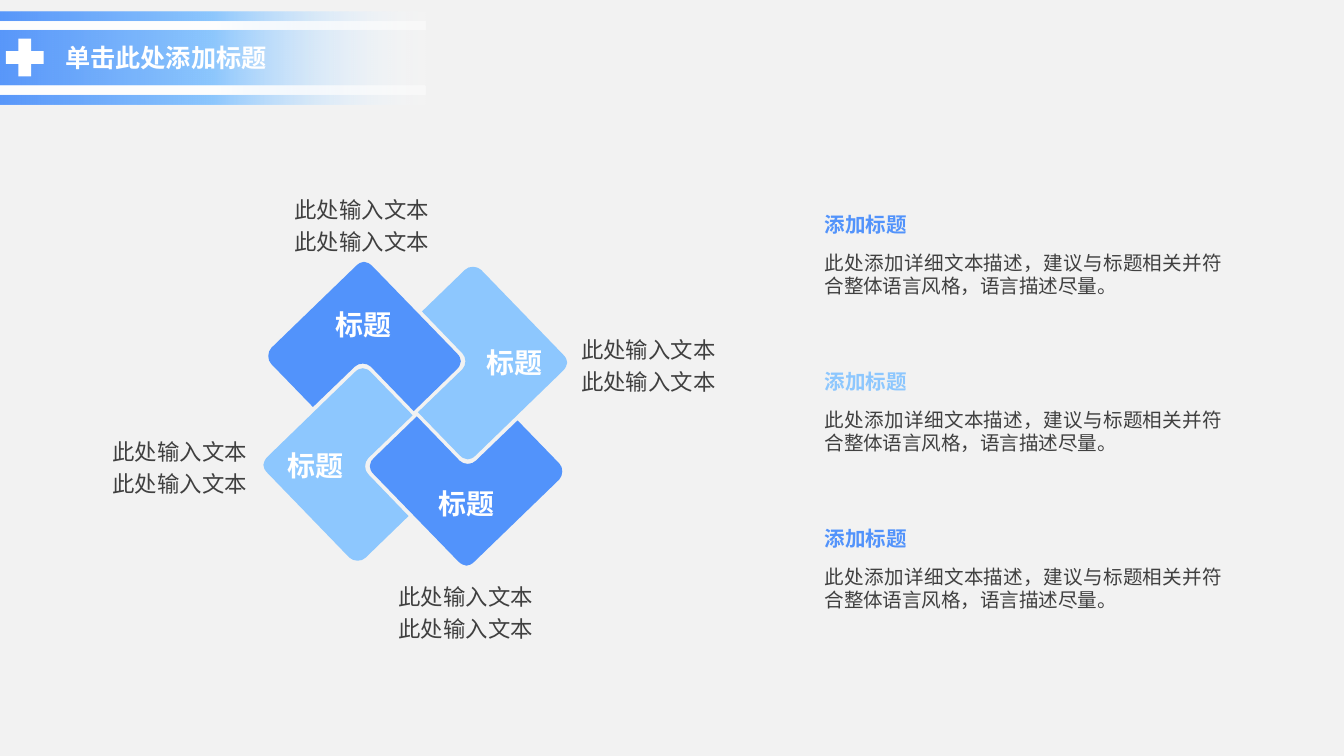
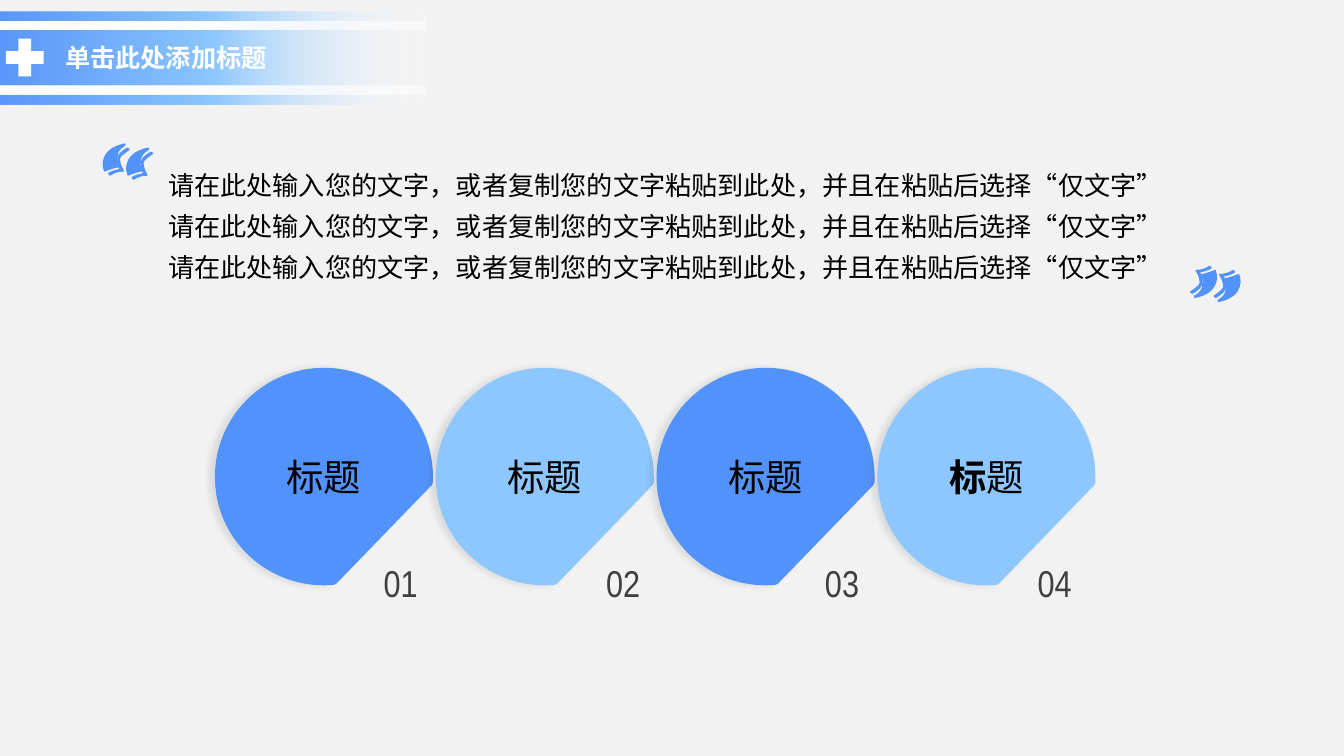
from lxml.etree import SubElement
from pptx import Presentation
from pptx.dml.color import RGBColor
from pptx.enum.shapes import MSO_SHAPE as SHAPE
from pptx.enum.text import MSO_ANCHOR as ANCHOR, MSO_AUTO_SIZE as AUTO, PP_ALIGN as ALIGN
from pptx.oxml.ns import qn
from pptx.util import Pt

FONT, NUMBER_FONT = "Noto Sans CJK SC", "Arial Narrow"
BLUE, SKY, WHITE = "5293FB", "8DC7FE", "FFFFFF"
GREY, BLACK, PAPER = "404040", "000000", "F2F2F2"
INSETS = (7.2, 3.6, 7.2, 3.6)

PETAL = [
    (-28.1, -24.4), (-25.9, -23.7, -24.5, -23.7, -23.8, -22.3),
    (-1.4, 0.8), (-25.2, 23.8), (-27.4, 26, -27.4, 30.3, -25.2, 32.4),
    (-3.6, 54.8), (-26.6, 77.1), (-28.8, 79.4, -33.1, 79.2, -35.3, 77.1),
    (-79.2, 31.7), (-80.6, 30.3, -81.4, 28.8, -81.4, 27.4),
    (-81.2, 26, -80.6, 24.5, -79.2, 23.1),
    (-32.4, -22.3), (-31, -23.7, -29.5, -24.4, -28.1, -24.4),
]
DISC = [
    (56.2, 0), (87.1, 0, 112.3, 25.2, 112.3, 56.2), (112.3, 59),
    (61.2, 111.8), (59.8, 111.9, 57.6, 112, 56.2, 112),
    (25.2, 112, 0, 87.1, 0, 56.2), (0, 25.2, 25.2, 0, 56.2, 0),
]
CRESCENT = [
    (13, 2.2), (13.7, 2.9), (10.8, 5, 8.6, 6.5, 8.6, 7.9),
    (8.6, 10.1, 9.4, 12.2, 10.8, 14.4), (7.9, 14.4, 5.8, 15.1, 3.6, 16.6),
    (2.9, 15.8), (5, 14.4, 6.5, 14.4, 8.6, 13.7), (9.4, 13.7),
    (7.9, 11.5, 7.2, 10.1, 7.9, 7.9), (7.9, 5.8, 9.4, 4.3, 13, 2.2),
]
DROP = [
    (11.5, 0), (11.5, 0.7), (8.6, 2.2, 7.2, 4.3, 7.2, 7.2),
    (6.5, 9.4, 7.2, 10.8, 7.9, 12.2), (7.2, 12.2),
    (4.3, 13, 2.2, 13.7, 0.7, 14.4), (0, 13, 0, 11.5, 0, 10.1),
    (0.7, 4.3, 5, 1.4, 11.5, 0),
]


def rgb(value):
    return RGBColor.from_string(value)


def box(x, y, w, h):
    return Pt(x), Pt(y), Pt(w), Pt(h)


def transform(outline, move):
    moved = []
    for seg in outline:
        points = [move(x, y) for x, y in zip(seg[::2], seg[1::2])]
        moved.append(tuple(v for point in points for v in point))
    return moved


def paint(sp, color, line=0):
    sp.shadow.inherit = False
    sp.fill.solid()
    sp.fill.fore_color.rgb = rgb(color)
    if line:
        sp.line.color.rgb = rgb(color)
        sp.line.width = Pt(line)
    else:
        sp.line.fill.background()


def bend(sp, contours):
    steps = iter(list(sp._element.iter(qn("a:lnTo"))))
    for outline in contours:
        for seg in outline[1:]:
            step = next(steps)
            if len(seg) == 6:
                step.tag = qn("a:cubicBezTo")
                for _ in range(2):
                    control = next(steps)
                    step.append(control[0])
                    control.getparent().remove(control)


def add_outline(shapes, x, y, contours, color, line=0):
    builder = None
    for outline in contours:
        flat = [v for seg in outline for v in seg]
        points = [(Pt(x + px), Pt(y + py)) for px, py in zip(flat[::2], flat[1::2])]
        if builder is None:
            builder = shapes.build_freeform(*points[0], scale=1.0)
        else:
            builder.move_to(*points[0])
        builder.add_line_segments(points[1:], close=True)
    sp = builder.convert_to_shape()
    curves = [seg for outline in contours for seg in outline if len(seg) == 6]
    if curves:
        replace_steps(sp, contours)
    paint(sp, color, line)
    return sp


def replace_steps(sp, contours):
    steps = iter(list(sp._element.iter(qn("a:lnTo"))))
    for outline in contours:
        for seg in outline[1:]:
            group = [next(steps) for _ in range(len(seg) // 2)]
            if len(group) == 1:
                continue
            parent = group[0].getparent()
            curve = SubElement(parent, qn("a:cubicBezTo"))
            group[0].addprevious(curve)
            for step in group:
                curve.append(step[0])
                parent.remove(step)


def style(r, size, color, bold=False, font=FONT):
    f = r.font
    f.size, f.bold, f.name = Pt(size), bold, font
    f.color.rgb = rgb(color)
    SubElement(r._r.get_or_add_rPr(), qn("a:ea")).set("typeface", font)


def write(sp, lines, size, color, bold=False, font=FONT, align=ALIGN.LEFT,
          anchor=ANCHOR.TOP, spacing=1.0, insets=INSETS, grow=False):
    tf = sp.text_frame
    tf.word_wrap = True
    tf.auto_size = AUTO.SHAPE_TO_FIT_TEXT if grow else AUTO.NONE
    tf.vertical_anchor = anchor
    tf.margin_left, tf.margin_top, tf.margin_right, tf.margin_bottom = map(Pt, insets)
    tf.text = "\n".join(lines)
    for p in tf.paragraphs:
        p.alignment, p.line_spacing, p.space_before = align, spacing, Pt(0)
        for r in p.runs:
            style(r, size, color, bold, font)


def add_text(shapes, x, y, w, h, lines, size, color, **options):
    write(shapes.add_textbox(*box(x, y, w, h)), lines, size, color, **options)


def place(placeholder, x, y, w, h):
    placeholder.left, placeholder.top, placeholder.width, placeholder.height = box(x, y, w, h)


def add_band(slide, x, y, w, h, stops):
    sp = slide.shapes.add_shape(SHAPE.RECTANGLE, *box(x, y, w, h))
    sp.shadow.inherit = False
    sp.line.fill.background()
    sp.fill.gradient()
    sp.fill.gradient_angle = 0
    gs_list = sp._element.spPr.find(qn("a:gradFill")).find(qn("a:gsLst"))
    for gs in list(gs_list):
        gs_list.remove(gs)
    for pos, color, alpha in stops:
        gs = SubElement(gs_list, qn("a:gs"), pos=str(pos * 1000))
        clr = SubElement(gs, qn("a:srgbClr"), val=color)
        SubElement(clr, qn("a:alpha"), val=str(alpha * 1000))


def add_header(slide, title, x=0, y=6.3, w=228.2, h=49.7):
    add_band(slide, x, y, w, h, [(0, BLUE, 95), (50, SKY, 100), (100, WHITE, 8)])
    for dy in (5.2, 39.8):
        add_band(slide, x, y + dy, w, 4.5, [(0, WHITE, 100), (50, WHITE, 100), (100, WHITE, 50)])
    plus = slide.shapes.add_shape(SHAPE.CROSS, *box(x + 3.2, y + 14.4, 20.2, 20.2))
    plus.adjustments[0] = 0.331
    paint(plus, WHITE)
    sp = slide.shapes.title
    place(sp, x + 28, y + 12.8, 159.1, 23.8)
    write(sp, [title], 13.5, WHITE, bold=True, grow=True)
    slide.shapes._spTree.append(sp._element)


def add_pinwheel(slide, cx, cy):
    inset = 13
    petals = [
        (SKY, ALIGN.LEFT, (inset, 0, 0, 0)),
        (BLUE, ALIGN.CENTER, (0, 0, 0, inset)),
        (SKY, ALIGN.RIGHT, (0, 0, inset, 0)),
        (BLUE, ALIGN.CENTER, (0, inset, 0, 0)),
    ]
    outline = PETAL
    for color, align, insets in petals:
        sp = add_outline(slide.shapes, cx, cy, [outline], color)
        write(sp, ["标题"], 15, WHITE, bold=True, align=align,
              anchor=ANCHOR.MIDDLE, insets=insets)
        outline = transform(outline, lambda x, y: (-y, x))
    captions = [
        (83.9, -45.3, ALIGN.LEFT), (-26.3, 87.2, ALIGN.CENTER),
        (-82, -120.2, ALIGN.CENTER), (-191.8, 9.4, ALIGN.RIGHT),
    ]
    for dx, dy, align in captions:
        add_text(slide.shapes, cx + dx, cy + dy, 106.6, 36, ["此处输入文本"] * 2, 12, GREY,
                 align=align, anchor=ANCHOR.MIDDLE, spacing=1.2, insets=(5, 2.9, 5, 2.9))


def add_card(slide, x, y, color):
    shapes = slide.shapes.add_group_shape().shapes
    add_text(shapes, x, y, 157.7, 20.9, ["添加标题"], 11, color, bold=True, grow=True)
    add_text(shapes, x, y + 20.9, 227.5, 33.8,
             ["此处添加详细文本描述，建议与标题相关并符合整体语言风格，语言描述尽量。"],
             10.5, GREY, align=ALIGN.JUSTIFY, grow=True)


def add_disc(slide, x, y, color, number, number_dx, number_w, bold_start):
    shapes = slide.shapes.add_group_shape().shapes
    sp = add_outline(shapes, x, y, [DISC], color, line=4.5)
    effects = sp._element.spPr.find(qn("a:effectLst"))
    shadow = SubElement(effects, qn("a:outerShdw"), blurRad=str(Pt(4)), dist=str(Pt(3)),
                        dir="10800000", algn="r", rotWithShape="0")
    clr = SubElement(shadow, qn("a:srgbClr"), val=BLACK)
    SubElement(clr, qn("a:alpha"), val="10000")
    write(sp, ["标题"], 20, BLACK, align=ALIGN.CENTER, anchor=ANCHOR.MIDDLE)
    if bold_start:
        p = sp.text_frame.paragraphs[0]
        p.runs[0].text = "标"
        p.runs[0].font.bold = True
        r = p.add_run()
        r.text = "题"
        style(r, 20, BLACK)
    add_text(shapes, x + number_dx, y + 91.4, number_w, 35.3, [number], 20, GREY,
             font=NUMBER_FONT, align=ALIGN.CENTER, anchor=ANCHOR.MIDDLE, spacing=1.3, grow=True)


def add_quote_mark(slide, x, y, rotation=0):
    contours = [transform(part, lambda px, py: (px + dx, py + dy))
                for dx, dy in ((0, 0), (12.6, 2.2)) for part in (CRESCENT, DROP)]
    add_outline(slide.shapes, x, y, contours, BLUE, line=0.75).rotation = rotation


def add_quote(slide, x, y, w, h):
    body = slide.placeholders[1]
    place(body, x, y, w, h)
    write(body, ["请在此处输入您的文字，或者复制您的文字粘贴到此处，并且在粘贴后选择“仅文字”"] * 3,
          14, BLACK, align=ALIGN.JUSTIFY, anchor=ANCHOR.MIDDLE, spacing=1.3)
    for p in body.text_frame.paragraphs:
        pPr = p._p.get_or_add_pPr()
        pPr.set("marL", "0")
        pPr.set("indent", "0")
        SubElement(pPr, qn("a:buNone"))
    slide.shapes._spTree.append(body._element)
    add_quote_mark(slide, x - 27.4, y + 3.6)
    add_quote_mark(slide, x + w - 9.4, y + 69.1, rotation=180)


def pinwheel_slide(prs, title):
    slide = prs.slides.add_slide(prs.slide_layouts[5])
    add_header(slide, title)
    add_pinwheel(slide, 222.5, 221.7)
    for i, color in enumerate((BLUE, SKY, BLUE)):
        add_card(slide, 434.7, 109.8 + i * 84.2, color)


def disc_slide(prs, title):
    slide = prs.slides.add_slide(prs.slide_layouts[1])
    add_header(slide, title)
    for i, number_w in enumerate((34.6, 41, 43.2, 38.9)):
        add_disc(slide, 117.4 + i * 118.3, 199.3, (BLUE, SKY)[i % 2], f"{i + 1:02}",
                 79.9 - i * 2.2, number_w, bold_start=i == 3)
    add_quote(slide, 82.8, 73.6, 564.5, 90)


def main():
    prs = Presentation()
    prs.slide_width, prs.slide_height = Pt(720), Pt(405)
    fill = prs.slide_master.background.fill
    fill.solid()
    fill.fore_color.rgb = rgb(PAPER)
    title = "单击此处添加标题"
    pinwheel_slide(prs, title)
    disc_slide(prs, title)
    prs.save("out.pptx")


if __name__ == "__main__":
    main()
